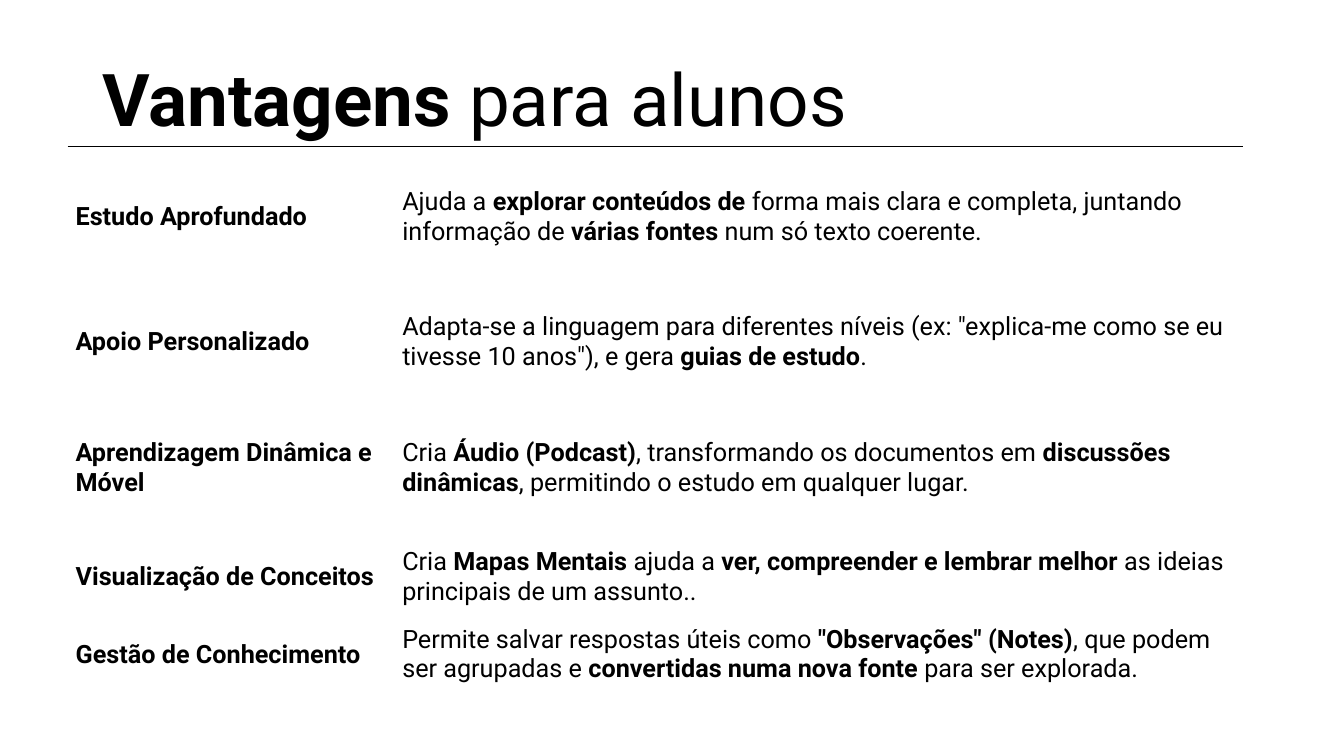
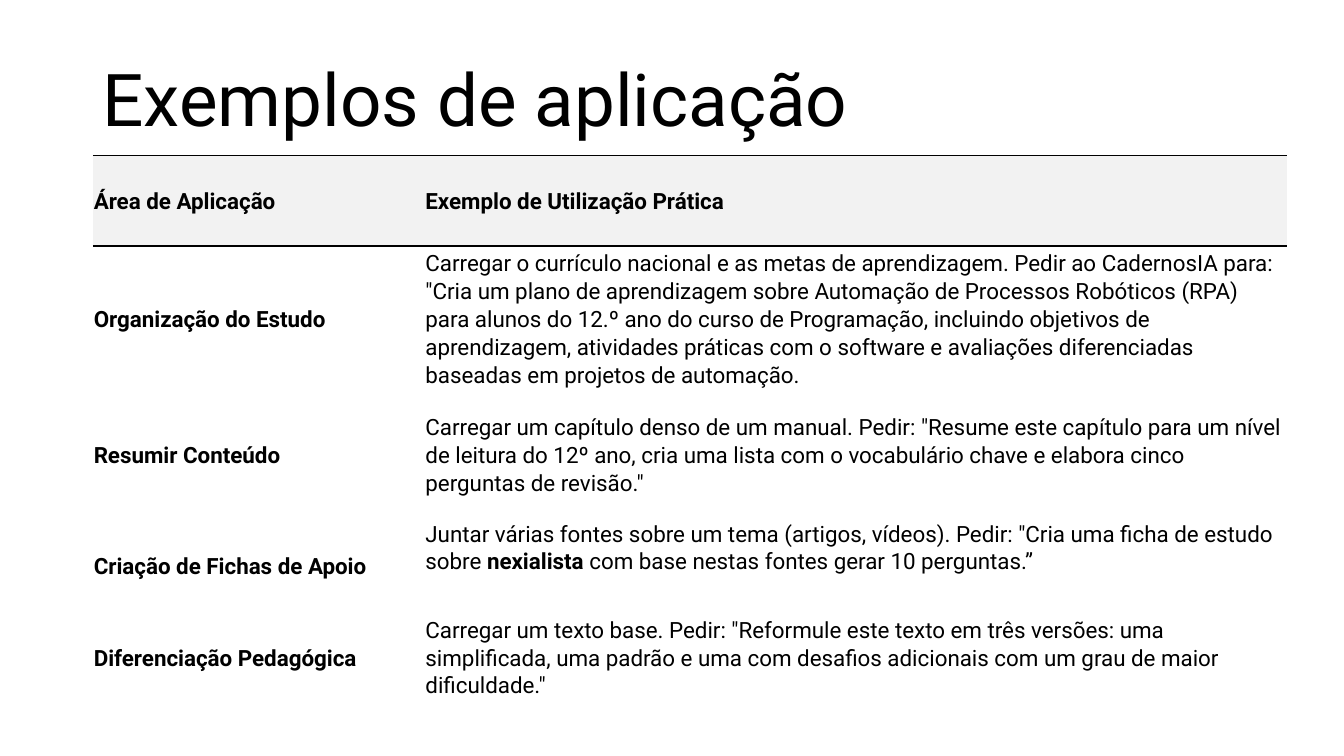
from dataclasses import dataclass

from lxml import etree
from pptx import Presentation
from pptx import util as u
from pptx.dml.color import RGBColor
from pptx.enum import text
from pptx.oxml import ns


@dataclass(frozen=True)
class Theme:
    font: str = "Roboto"
    ink: str = "000000"
    paper: str = "FFFFFF"
    header: str = "F2F2F2"
    title_size: int = 52
    rule_width: int = 1


@dataclass(frozen=True)
class TableStyle:
    left: float
    top: float
    columns: tuple
    heights: tuple
    size: int
    inset_x: float
    inset_y: float
    ruled_edges: tuple
    header: bool = False
    line_spacing: float = 1.0
    space_after: int = 0
    top_aligned: tuple = ()


THEME = Theme()
MIDDLE = text.MSO_ANCHOR.MIDDLE

ADVANTAGES = TableStyle(
    left=0.67, top=1.45, columns=(3.24, 8.42),
    heights=(1.4, 1.09, 1.4, 0.77, 0.77), size=18,
    inset_x=0.08, inset_y=0.04, ruled_edges=(0,),
)
EXAMPLES = TableStyle(
    left=0.92, top=1.54, columns=(3.29, 8.55),
    heights=(0.9, 1.41, 1.26, 0.94, 0.85), size=16,
    inset_x=0.01, inset_y=0.01, ruled_edges=(0, 1), header=True,
    line_spacing=1.07, space_after=8, top_aligned=((3, 1),),
)

ADVANTAGE_ROWS = [
    ("**Estudo Aprofundado**",
     "Ajuda a **explorar conteúdos de** forma mais clara e completa, "
     "juntando informação de **várias fontes **num só texto coerente."),
    ("**Apoio Personalizado**",
     "Adapta-se a linguagem para diferentes níveis (ex: \"explica-me como "
     "se eu tivesse 10 anos\"), e gera **guias de estudo**."),
    ("**Aprendizagem Dinâmica e Móvel**",
     "Cria **Áudio (Podcast)**, transformando os documentos em "
     "**discussões dinâmicas**, permitindo o estudo em qualquer lugar."),
    ("**Visualização de Conceitos**",
     "Cria **Mapas Mentais **ajuda a **ver, compreender e lembrar melhor** "
     "as ideias principais de um assunto.."),
    ("**Gestão de Conhecimento**",
     "Permite salvar respostas úteis como **\"Observações\" (Notes)**, que "
     "podem ser agrupadas e **convertidas numa nova fonte** para ser "
     "explorada."),
]
EXAMPLE_ROWS = [
    ("**Área de Aplicação**", "**Exemplo de Utilização Prática**"),
    ("**Organização do Estudo**",
     "Carregar o currículo nacional e as metas de aprendizagem. Pedir ao "
     "CadernosIA para: \"Cria um plano de aprendizagem sobre Automação de "
     "Processos Robóticos (RPA) para alunos do 12.º ano do curso de "
     "Programação, incluindo objetivos de aprendizagem, atividades práticas "
     "com o software e avaliações diferenciadas baseadas em projetos de "
     "automação."),
    ("**Resumir Conteúdo**",
     "Carregar um capítulo denso de um manual. Pedir: \"Resume este capítulo "
     "para um nível de leitura do 12º ano, cria uma lista com o vocabulário "
     "chave e elabora cinco perguntas de revisão.\""),
    ("**Criação de Fichas de Apoio**",
     "Juntar várias fontes sobre um tema (artigos, vídeos). Pedir: \"Cria "
     "uma ficha de estudo sobre **nexialista **com base nestas fontes gerar "
     "10 perguntas.”"),
    ("**Diferenciação Pedagógica**",
     "Carregar um texto base. Pedir: \"Reformule este texto em três versões: "
     "uma simplificada, uma padrão e uma com desafios adicionais com um grau "
     "de maior dificuldade.\""),
]


def add_spans(para, marked, size):
    for index, part in enumerate(marked.split("**")):
        if part:
            span = para.add_run()
            span.text = part
            span.font.name = THEME.font
            span.font.size = u.Pt(size)
            span.font.bold = index % 2 == 1
            span.font.color.rgb = RGBColor.from_string(THEME.ink)


def add_title(page, marked):
    box = page.shapes.add_textbox(
        u.Inches(0.92), u.Inches(0.2), u.Inches(11.5), u.Inches(1.65))
    box.text_frame.word_wrap = True
    box.text_frame.vertical_anchor = MIDDLE
    para = box.text_frame.paragraphs[0]
    para.line_spacing = 0.9
    add_spans(para, marked, THEME.title_size)


def set_borders(cell, ruled_sides):
    properties = cell._tc.get_or_add_tcPr()
    for side in "LRTB":
        line = etree.SubElement(properties, ns.qn(f"a:ln{side}"))
        if side in ruled_sides:
            line.set("w", str(u.Pt(THEME.rule_width)))
            fill = etree.SubElement(line, ns.qn("a:solidFill"))
            etree.SubElement(fill, ns.qn("a:srgbClr")).set("val", THEME.ink)
        else:
            line.set("w", "0")
            etree.SubElement(line, ns.qn("a:noFill"))


def fill_cell(cell, marked, row, column, style):
    sides = {side for side, edge in (("T", row), ("B", row + 1))
             if edge in style.ruled_edges}
    set_borders(cell, sides)
    color = THEME.header if style.header and row == 0 else THEME.paper
    cell.fill.solid()
    cell.fill.fore_color.rgb = RGBColor.from_string(color)
    cell.margin_left = cell.margin_right = u.Inches(style.inset_x)
    cell.margin_top = cell.margin_bottom = u.Inches(style.inset_y)
    at_top = (row, column) in style.top_aligned
    cell.vertical_anchor = text.MSO_ANCHOR.TOP if at_top else MIDDLE
    para = cell.text_frame.paragraphs[0]
    para.line_spacing = style.line_spacing
    para.space_after = u.Pt(style.space_after)
    add_spans(para, marked, style.size)


def add_text_table(page, rows, style):
    table = page.shapes.add_table(
        len(rows), len(style.columns),
        u.Inches(style.left), u.Inches(style.top),
        u.Inches(sum(style.columns)), u.Inches(sum(style.heights))).table
    table.first_row = style.header
    table.horz_banding = False
    for column, width in zip(table.columns, style.columns):
        column.width = u.Inches(width)
    for row, height in zip(table.rows, style.heights):
        row.height = u.Inches(height)
    for row, entries in enumerate(rows):
        for column, marked in enumerate(entries):
            fill_cell(table.cell(row, column), marked, row, column, style)


def add_table_page(deck, title, rows, style):
    page = deck.slides.add_slide(deck.slide_layouts[6])
    page.background.fill.solid()
    page.background.fill.fore_color.rgb = RGBColor.from_string(THEME.paper)
    add_title(page, title)
    add_text_table(page, rows, style)


def main():
    deck = Presentation()
    deck.slide_width = u.Inches(13.33)
    deck.slide_height = u.Inches(7.5)
    add_table_page(deck, "**Vantagens** para alunos", ADVANTAGE_ROWS, ADVANTAGES)
    add_table_page(deck, "Exemplos de aplicação", EXAMPLE_ROWS, EXAMPLES)
    deck.save("out.pptx")


if __name__ == "__main__":
    main()
